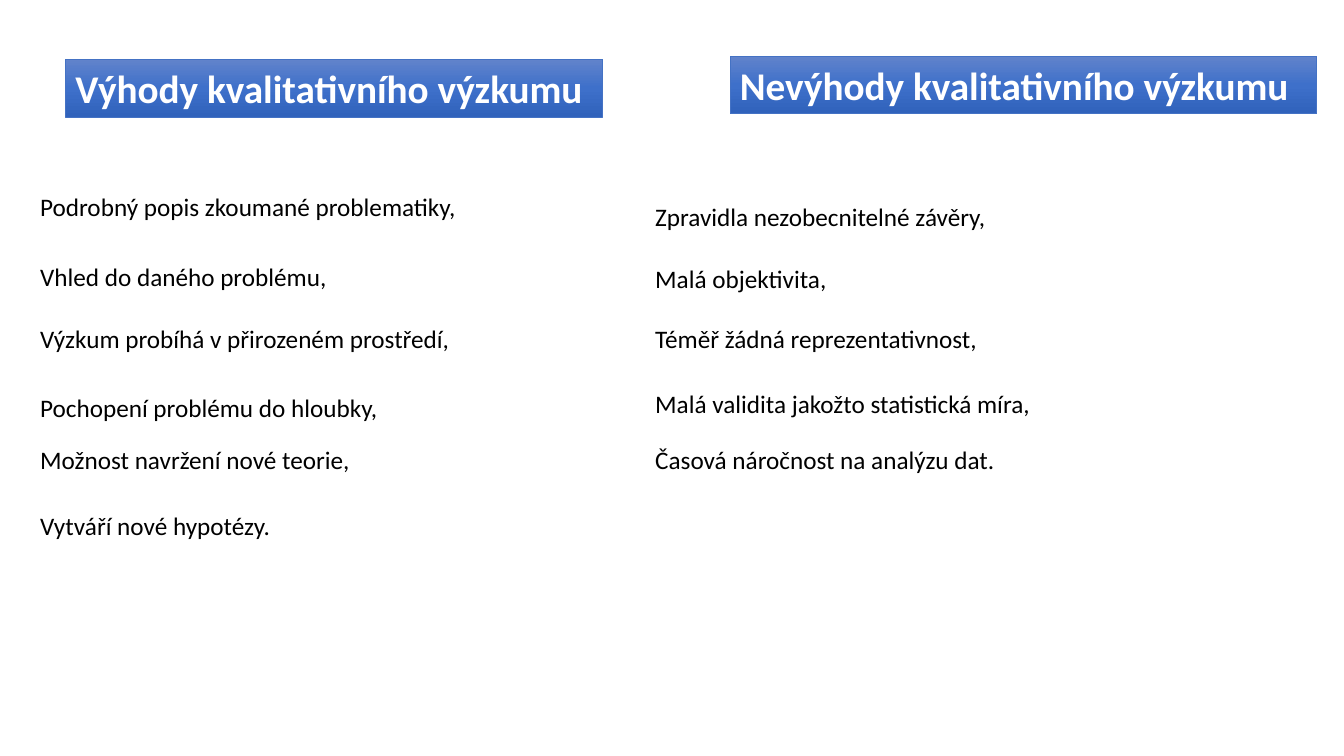
import copy
from dataclasses import dataclass

import pptx
import pptx.dml.color
import pptx.enum.shapes
import pptx.enum.text
import pptx.oxml.ns
import pptx.util
from pptx.util import Inches


@dataclass(frozen=True)
class Theme:
    font: str = "Calibri"
    heading_size: int = 28
    item_size: int = 18
    heading_text: str = "FFFFFF"
    item_text: str = "000000"
    heading_line: str = "4472C4"
    heading_line_width: float = 0.5
    gradient: tuple = ((0, "6183CB"), (0.5, "3E70CA"), (1, "3062BB"))


THEME = Theme()
HEADING_HEIGHT = 0.57
ITEM_HEIGHT = 0.4
ITEM_WIDTH = 6.67

# Each column: heading box (left, top, width), left edge of the items,
# items with their tops, and the width of the unwrapped last item
COLUMNS = [
    ("Výhody kvalitativního výzkumu", (0.65, 0.59, 5.33), 0.3, [
        (1.85, "Podrobný popis zkoumané problematiky,"),
        (2.54, "Vhled do daného problému,"),
        (3.16, "Výzkum probíhá v přirozeném prostředí,"),
        (3.84, "Pochopení problému do hloubky,"),
        (4.36, "Možnost navržení nové teorie,"),
        (5.01, "Vytváří nové hypotézy."),
    ], 2.57),
    ("Nevýhody kvalitativního výzkumu", (7.24, 0.56, 5.82), 6.4, [
        (1.95, "Zpravidla nezobecnitelné závěry,"),
        (2.56, "Malá objektivita,"),
        (3.16, "Téměř žádná reprezentativnost,"),
        (3.8, "Malá validita jakožto statistická míra,"),
        (4.36, "Časová náročnost na analýzu dat."),
    ], 3.66),
]


def rgb(value):
    return pptx.dml.color.RGBColor.from_string(value)


def write_text(shape, text, size, color, bold=False, wrap=True):
    frame = shape.text_frame
    frame.word_wrap = wrap
    frame.auto_size = pptx.enum.text.MSO_AUTO_SIZE.SHAPE_TO_FIT_TEXT
    paragraph = frame.paragraphs[0]
    paragraph.alignment = pptx.enum.text.PP_ALIGN.LEFT
    run = paragraph.add_run()
    run.text = text
    run.font.name = THEME.font
    run.font.size = pptx.util.Pt(size)
    run.font.bold = bold
    run.font.color.rgb = rgb(color)


def fill_gradient(shape):
    shape.fill.gradient()
    shape.fill.gradient_angle = 270
    # The default gradient has two stops; add the middle one
    stop_list = shape.element.spPr.find(".//" + pptx.oxml.ns.qn("a:gsLst"))
    stop_list.append(copy.deepcopy(stop_list[-1]))
    for stop, (position, color) in zip(shape.fill.gradient_stops, THEME.gradient):
        stop.position = position
        stop.color.rgb = rgb(color)


def add_heading(slide, text, left, top, width):
    shape = slide.shapes.add_shape(
        pptx.enum.shapes.MSO_SHAPE.RECTANGLE,
        Inches(left), Inches(top), Inches(width), Inches(HEADING_HEIGHT))
    shape.shadow.inherit = False
    fill_gradient(shape)
    shape.line.color.rgb = rgb(THEME.heading_line)
    shape.line.width = pptx.util.Pt(THEME.heading_line_width)
    write_text(shape, text, THEME.heading_size, THEME.heading_text, bold=True)


def add_items(slide, left, items, last_width):
    for index, (top, text) in enumerate(items):
        is_last = index == len(items) - 1
        width = last_width if is_last else ITEM_WIDTH
        box = slide.shapes.add_textbox(
            Inches(left), Inches(top), Inches(width), Inches(ITEM_HEIGHT))
        write_text(box, text, THEME.item_size, THEME.item_text, wrap=not is_last)


def build_comparison_slide(presentation):
    slide = presentation.slides.add_slide(presentation.slide_layouts[6])
    for heading, heading_box, left, items, last_width in COLUMNS:
        add_heading(slide, heading, *heading_box)
        add_items(slide, left, items, last_width)


def main():
    presentation = pptx.Presentation()
    presentation.slide_width = Inches(13.33)
    presentation.slide_height = Inches(7.5)
    build_comparison_slide(presentation)
    presentation.save("out.pptx")


if __name__ == "__main__":
    main()
